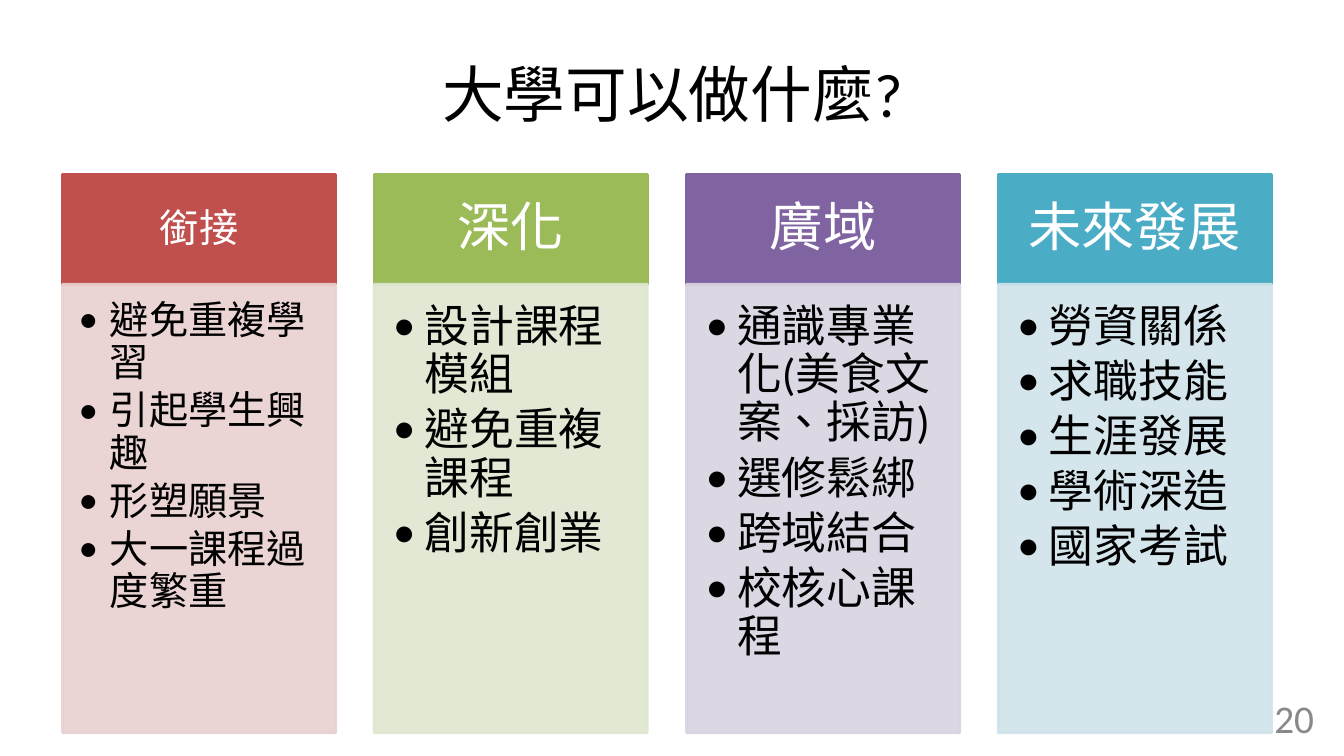
from lxml import etree
from pptx import Presentation
from pptx.dml.color import RGBColor
from pptx.enum.lang import MSO_LANGUAGE_ID
from pptx.enum.shapes import MSO_SHAPE
from pptx.enum.text import MSO_ANCHOR, PP_ALIGN
from pptx.oxml.ns import qn
from pptx.util import Pt

RECT = MSO_SHAPE.RECTANGLE
TOP, MIDDLE = MSO_ANCHOR.TOP, MSO_ANCHOR.MIDDLE
LEFT, CENTER, RIGHT = PP_ALIGN.LEFT, PP_ALIGN.CENTER, PP_ALIGN.RIGHT
CHINESE = MSO_LANGUAGE_ID.TRADITIONAL_CHINESE
PX = 9144  # 100 px to the inch

THEME = {
    "font": "Calibri",
    "black": "000000", "white": "FFFFFF", "gray": "898989",
    "red": ("C0504D", "E8D0D0"),
    "green": ("9BBB59", "DEE7D1"),
    "purple": ("8064A2", "D8D3E0"),
    "teal": ("4BACC6", "D0E3EA"),
    "title": 44, "number": 28,
    "small": (28, 28), "large": (38, 32),
}


def write(box, lines, size, color, align=LEFT, anchor=MIDDLE,
          insets=(10, 5, 10, 5), spacing=None, bullets=False):
    frame = box.text_frame
    frame.word_wrap = True
    frame.vertical_anchor = anchor
    (frame.margin_left, frame.margin_top,
     frame.margin_right, frame.margin_bottom) = [inset * PX for inset in insets]
    for index, line in enumerate(lines):
        paragraph = frame.add_paragraph() if index else frame.paragraphs[0]
        paragraph.alignment = align
        if spacing:
            paragraph.line_spacing = spacing
        if bullets:
            paragraph.space_after = Pt(round(size * 0.15, 1))
            properties = paragraph._p.get_or_add_pPr()
            properties.set("marL", str(31 * PX))
            properties.set("indent", str(-31 * PX))
            etree.SubElement(properties, qn("a:buFont")).set("typeface", THEME["font"])
            etree.SubElement(properties, qn("a:buChar")).set("char", "•")
        run = paragraph.add_run()
        run.text = line
        run.font.size = Pt(size)
        run.font.name = THEME["font"]
        run.font.language_id = CHINESE
        run.font.color.rgb = RGBColor.from_string(color)


def add_panel(left, top, width, height, color, opacity=100):
    panel = slide.shapes.add_shape(RECT, left * PX, top * PX, width * PX, height * PX)
    panel.shadow.inherit = False
    panel.fill.solid()
    panel.line.width = Pt(2)
    for paint in (panel.fill.fore_color, panel.line.color):
        paint.rgb = RGBColor.from_string(color)
    if opacity < 100:
        for rgb in panel._element.spPr.iter(qn("a:srgbClr")):
            etree.SubElement(rgb, qn("a:alpha")).set("val", str(opacity * 1000))
    return panel


presentation = Presentation()
presentation.slide_width, presentation.slide_height = 1333 * PX, 750 * PX
slide = presentation.slides.add_slide(presentation.slide_layouts[6])

# Title
title = slide.shapes.add_textbox(67 * PX, 30 * PX, 1200 * PX, 125 * PX)
write(title, ["大學可以做什麼?"], THEME["title"], THEME["black"], align=CENTER)

# Four columns: heading above a bulleted list
COLUMNS = [
    ("銜接", "red", "small",
     ["避免重複學習", "引起學生興趣", "形塑願景", "大一課程過度繁重"]),
    ("深化", "green", "large",
     ["設計課程模組", "避免重複課程", "創新創業"]),
    ("廣域", "purple", "large",
     ["通識專業化(美食文案、採訪)", "選修鬆綁", "跨域結合", "校核心課程"]),
    ("未來發展", "teal", "large",
     ["勞資關係", "求職技能", "生涯發展", "學術深造", "國家考試"]),
]
HEADING_INSETS = (22, 12, 22, 12)
LIST_INSETS = {"small": (16, 16, 22, 24), "large": (19, 19, 25, 28)}
FIRST_LEFT, LAST_LEFT, COLUMN_WIDTH = 62, 990, 271
HEADING_TOP, HEADING_HEIGHT, LIST_HEIGHT = 173, 109, 445
step = (LAST_LEFT - FIRST_LEFT) / (len(COLUMNS) - 1)

for index, (topic, hue, scale, points) in enumerate(COLUMNS):
    left = round(FIRST_LEFT + index * step)
    strong, pale = THEME[hue]
    heading_size, list_size = THEME[scale]
    heading = add_panel(left, HEADING_TOP, COLUMN_WIDTH, HEADING_HEIGHT, strong)
    write(heading, [topic], heading_size, THEME["white"], align=CENTER,
          insets=HEADING_INSETS, spacing=0.9)
    point_list = add_panel(left, HEADING_TOP + HEADING_HEIGHT, COLUMN_WIDTH,
                           LIST_HEIGHT, pale, opacity=90)
    write(point_list, points, list_size, THEME["black"], anchor=TOP,
          insets=LIST_INSETS[scale], spacing=0.9, bullets=True)

# Slide number
slide_number = slide.shapes.add_textbox(1002 * PX, 692 * PX, 311 * PX, 40 * PX)
write(slide_number, ["20"], THEME["number"], THEME["gray"], align=RIGHT)

presentation.save("out.pptx")
